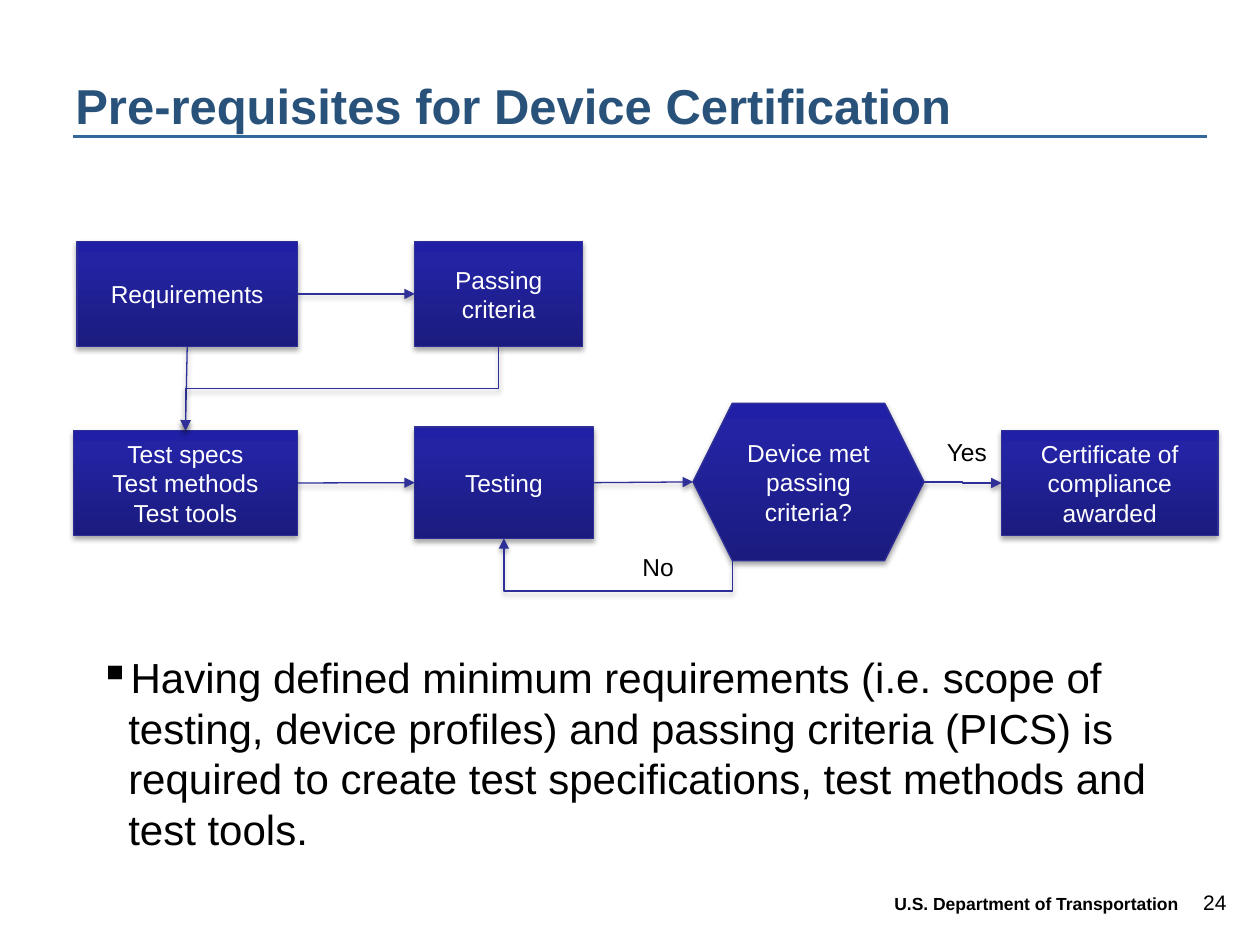
from lxml import etree
from pptx import Presentation
from pptx import util as u
from pptx.dml.color import RGBColor
from pptx.enum import shapes, text
from pptx.oxml import parse_xml
from pptx.oxml.ns import nsdecls, qn

COLORS = {
    "title": "29527B", "rule": "336699", "edge": "2F2F98",
    "ink": "000000", "light": "FFFFFF",
}
BOX_STOPS = ((0, "1B1B7E"), (80, "2323A3"), (100, "2020A6"))
GRID = 12  # columns and rows per inch

SHAPE = shapes.MSO_SHAPE
CONN = shapes.MSO_CONNECTOR
ALIGN = text.PP_ALIGN
TOP, LEFT, BOTTOM, RIGHT = range(4)


def g(n):
    """Length of n grid cells."""
    return u.Inches(n / GRID)


def rgb(name):
    return RGBColor.from_string(COLORS[name])


def write(sp, lines, color="ink", align=ALIGN.LEFT, anchor=text.MSO_ANCHOR.TOP,
          wrap=True, **font):
    """Put one paragraph per line into a shape; font holds run font values."""
    tf = sp.text_frame
    tf.word_wrap = wrap
    tf.vertical_anchor = anchor
    for i, line in enumerate(lines):
        p = tf.add_paragraph() if i else tf.paragraphs[0]
        p.alignment = align
        r = p.add_run()
        r.text = line
        for key, value in {"name": "Arial", **font}.items():
            setattr(r.font, key, value)
        r.font.color.rgb = rgb(color)
    return tf


def add_text(s, x, y, w, h, line, **fmt):
    sp = s.shapes.add_textbox(g(x), g(y), g(w), g(h))
    return write(sp, [line], **fmt)


def add_bullet(p, char, margin, hang):
    pPr = p._p.get_or_add_pPr()
    pPr.set("marL", str(u.Inches(margin)))
    pPr.set("indent", str(-u.Inches(hang)))
    etree.SubElement(pPr, qn("a:buChar")).set("char", char)


def style_edge(sp, color="edge", width=0.75, shadow=True):
    """Line colour and width, then the effect list that must follow the line."""
    sp.line.color.rgb = rgb(color)
    sp.line.width = u.Pt(width)
    effects = parse_xml(f"<a:effectLst {nsdecls('a')}/>")
    if shadow:
        effects.append(parse_xml(
            f'<a:outerShdw {nsdecls("a")} blurRad="{u.Pt(3.1)}" dist="{u.Pt(1.8)}"'
            ' dir="5400000" rotWithShape="0"><a:srgbClr val="000000">'
            '<a:alpha val="35000"/></a:srgbClr></a:outerShdw>'))
    sp._element.spPr.append(effects)


def fill_gradient(sp):
    sp.fill.gradient()
    sp.fill.gradient_angle = 90
    stops = sp._element.spPr.find(qn("a:gradFill")).find(qn("a:gsLst"))
    for stop in list(stops):
        stops.remove(stop)
    for pos, color in BOX_STOPS:
        stop = etree.SubElement(stops, qn("a:gs"), pos=str(pos * 1000))
        etree.SubElement(stop, qn("a:srgbClr"), val=color)


def add_box(s, kind, x, y, w, h, *lines):
    sp = s.shapes.add_shape(kind, g(x), g(y), g(w), g(h))
    fill_gradient(sp)
    style_edge(sp)
    write(sp, lines, color="light", align=ALIGN.CENTER,
          anchor=text.MSO_ANCHOR.MIDDLE, size=u.Pt(14))
    return sp


def side(sp, i):
    """Middle of side i of a shape."""
    dx, dy = ((1, 0), (0, 1), (1, 2), (2, 1))[i]
    return sp.left + sp.width * dx // 2, sp.top + sp.height * dy // 2


def style_arrow(c):
    style_edge(c)
    ln = c._element.spPr.find(qn("a:ln"))
    etree.SubElement(ln, qn("a:tailEnd"), type="triangle")


def add_arrow(s, a, i, b, j, kind=CONN.STRAIGHT):
    c = s.shapes.add_connector(kind, *side(a, i), *side(b, j))
    for sp, k, connect in ((a, i, c.begin_connect), (b, j, c.end_connect)):
        if sp.auto_shape_type != SHAPE.HEXAGON:
            connect(sp, k)
    style_arrow(c)


def add_vertical_elbow(s, start, end, turn=0.5):
    """Elbow leaving down and running left; turn is the bend's share of the drop."""
    (x1, y1), (x2, y2) = start, end
    cx, cy = (x1 + x2) // 2, (y1 + y2) // 2
    half_w, half_h = (y2 - y1) // 2, (x1 - x2) // 2
    c = s.shapes.add_connector(CONN.ELBOW, cx - half_w, cy - half_h,
                               cx + half_w, cy + half_h)
    spPr = c._element.spPr
    spPr.find(qn("a:xfrm")).set("rot", str(90 * 60000))
    guides = spPr.find(qn("a:prstGeom")).get_or_add_avLst()
    etree.SubElement(guides, qn("a:gd"), name="adj1",
                     fmla=f"val {round(turn * 100000)}")
    style_arrow(c)


def add_frame(s):
    rule = s.shapes.add_connector(CONN.STRAIGHT, g(7), g(13), g(115), g(13))
    style_edge(rule, "rule", 1.5, shadow=False)
    add_text(s, 113, 84.1, 5, 3.6, "24", align=ALIGN.RIGHT, size=u.Pt(12))
    tf = add_text(s, 84, 85, 33, 2.75, "U.S. Department of Transportation",
                  size=u.Pt(10), bold=True)
    tf.paragraphs[0].line_spacing = u.Pt(9)
    add_text(s, 6, 5, 108, 10, "Pre-requisites for Device Certification",
             color="title", anchor=text.MSO_ANCHOR.MIDDLE, size=u.Pt(28), bold=True)


def add_flow(s):
    process = SHAPE.FLOWCHART_PROCESS
    needs = add_box(s, SHAPE.RECTANGLE, 7.33, 23, 21, 10, "Requirements")
    specs = add_box(s, SHAPE.RECTANGLE, 7, 41, 21.33, 10,
                    "Test specs", "Test methods", "Test tools")
    testing = add_box(s, process, 39.5, 40.67, 17, 10.6, "Testing")
    criteria = add_box(s, process, 39.5, 23, 16, 10, "Passing", "criteria")
    award = add_box(s, SHAPE.RECTANGLE, 95.4, 41, 20.6, 10,
                    "Certificate of", "compliance", "awarded")
    check = add_box(s, SHAPE.HEXAGON, 66, 38.4, 22, 15, "Device met passing criteria?")

    add_arrow(s, needs, RIGHT, criteria, LEFT)
    add_arrow(s, needs, BOTTOM, specs, TOP)
    add_arrow(s, specs, RIGHT, testing, LEFT)
    add_arrow(s, testing, RIGHT, check, LEFT)
    add_arrow(s, check, RIGHT, award, LEFT, CONN.ELBOW)
    add_vertical_elbow(s, side(criteria, BOTTOM), side(specs, TOP))
    corner = check.left + check.height // 4, check.top + check.height
    add_vertical_elbow(s, corner, side(testing, BOTTOM), turn=-1.36)

    for x, y, w, label in ((60, 52, 6, "No"), (89, 41, 6.4, "Yes")):
        add_text(s, x, y, w, 4.8, label, wrap=False, size=u.Pt(14))


def main():
    prs = Presentation()
    prs.slide_width, prs.slide_height = g(120), g(90)
    s = prs.slides.add_slide(prs.slide_layouts[6])
    add_frame(s)
    add_flow(s)
    tf = add_text(
        s, 6, 61.5, 108, 16.5,
        "Having defined minimum requirements (i.e. scope of testing, device profiles) "
        "and passing criteria (PICS) is required to create test specifications, "
        "test methods and test tools.", size=u.Pt(24))
    add_bullet(tf.paragraphs[0], "▪", 0.42, 0.23)
    prs.save("out.pptx")


if __name__ == "__main__":
    main()
